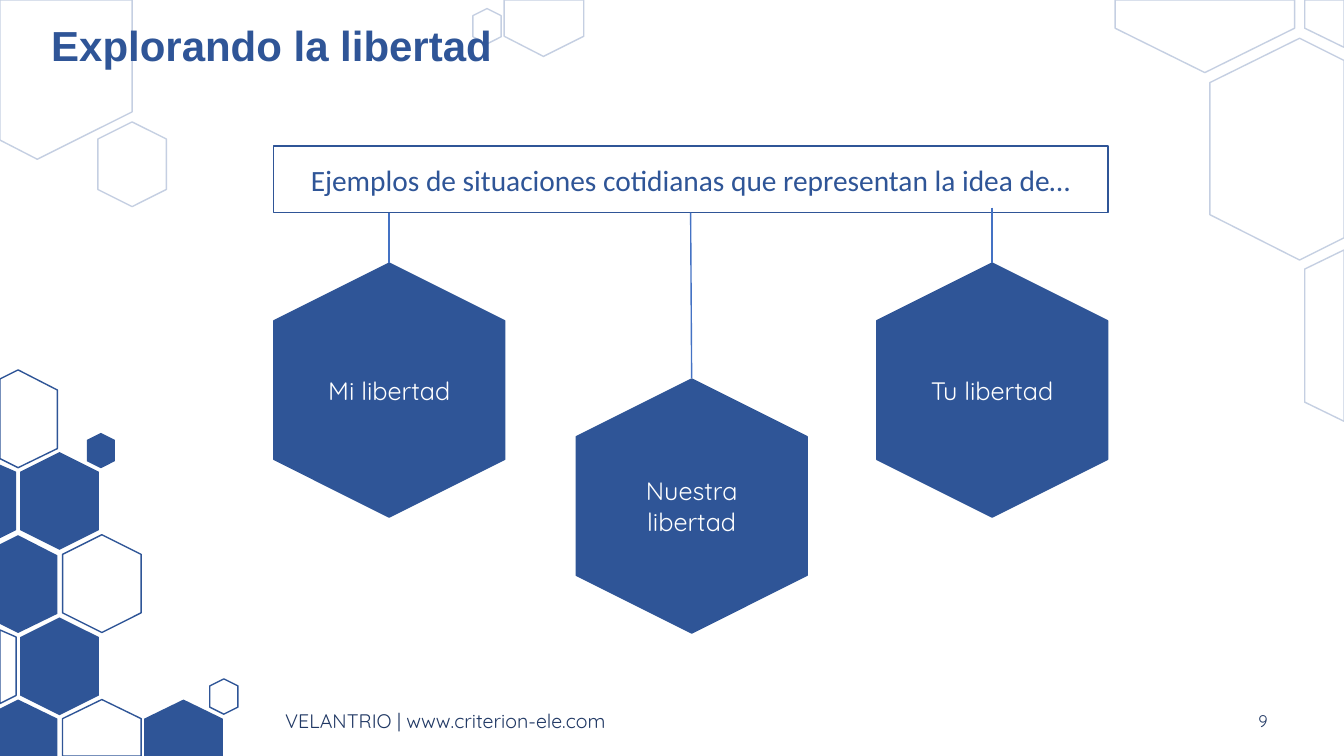
from lxml.etree import SubElement
from pptx import Presentation
from pptx.dml.color import RGBColor
from pptx.enum.shapes import MSO_CONNECTOR, MSO_SHAPE
from pptx.enum.text import MSO_ANCHOR, PP_ALIGN
from pptx.oxml.ns import qn
from pptx.util import Inches, Pt

BLUE = "2F5597"
NAVY = "203864"
WHITE = "FFFFFF"
LINK = "4472C4"

FAINT = [
    [(5, 0), (5.79, 0), (5.79, 0.36), (5.39, 0.56), (5, 0.36)],
    [(11.06, 0), (12.84, 0), (12.84, 0.28), (11.95, 0.72), (11.06, 0.28)],
    [(12.94, 0), (13.33, 0), (13.33, 0.47), (12.94, 0.28)],
    [(12.89, 0.38), (13.33, 0.6), (13.33, 2.36), (12.89, 2.58),
     (12, 2.13), (12, 0.82)],
    [(0, 0), (1.31, 0), (1.31, 1.11), (0.37, 1.58), (0, 1.39)],
    [(13.33, 2.48), (13.33, 4.18), (12.94, 3.99), (12.94, 2.67)],
]
HALF = [(0.18, 3.67), (0.57, 3.87), (0.57, 4.45), (0.18, 4.64),
        (0, 4.55), (0, 3.76)]
EDGE = [(0, 4.61), (0.16, 4.68), (0.16, 5.26), (0, 5.34)]
BASE = [(1.01, 6.94), (1.4, 7.13), (1.4, 7.5), (0.62, 7.5), (0.62, 7.13)]
CORNER = [(0.18, 6.94), (0.57, 7.13), (0.57, 7.5), (0, 7.5), (0, 7.03)]
ROW = 1.64
STEP = 0.81


def color(text):
    return RGBColor.from_string(text)


def paint(shape, fill, line=None, alpha=None):
    shape.shadow.inherit = False
    shape.fill.solid()
    shape.fill.fore_color.rgb = color(fill)
    if line is None:
        shape.line.fill.background()
        return
    shape.line.color.rgb = color(line)
    shape.line.width = Pt(1)
    if alpha:
        tint = shape.line._get_or_add_ln().find(".//" + qn("a:srgbClr"))
        SubElement(tint, qn("a:alpha")).set("val", str(alpha * 1000))


def write(shape, text, size, font, tone, align=PP_ALIGN.LEFT):
    frame = shape.text_frame
    frame.word_wrap = True
    frame.vertical_anchor = MSO_ANCHOR.MIDDLE
    para = frame.paragraphs[0]
    para.text = text
    para.alignment = align
    para.font.size = Pt(size)
    para.font.name = font
    para.font.color.rgb = color(tone)
    return para


def label(slide, x, y, w, h, *style):
    box = slide.shapes.add_textbox(Inches(x), Inches(y), Inches(w), Inches(h))
    return write(box, *style)


def hexagon(slide, x, y, long, wide, *style):
    shape = slide.shapes.add_shape(
        MSO_SHAPE.HEXAGON, Inches(x - long / 2), Inches(y - wide / 2),
        Inches(long), Inches(wide))
    shape.rotation = 90
    paint(shape, *style)
    return shape


def outline(slide, points, *style):
    spots = [(Inches(x), Inches(y)) for x, y in points]
    form = slide.shapes.build_freeform(*spots[0])
    form.add_line_segments(spots[1:], close=True)
    paint(form.convert_to_shape(), *style)


def shift(points, x=0, y=0):
    return [(a + x, b + y) for a, b in points]


def link(slide, x, y, to_x, to_y):
    line = slide.shapes.add_connector(
        MSO_CONNECTOR.STRAIGHT, Inches(x), Inches(y), Inches(to_x), Inches(to_y))
    line.line.color.rgb = color(LINK)
    line.line.width = Pt(1)
    SubElement(line._element.spPr, qn("a:effectLst"))
    return line


def decorate(slide):
    hexagon(slide, 4.83, 0.26, 0.35, 0.28, WHITE, BLUE, 28)
    for points in FAINT:
        outline(slide, points, WHITE, BLUE, 28)
    hexagon(slide, 1.31, 1.63, 0.84, 0.68, WHITE, BLUE, 28)

    outline(slide, HALF, WHITE, BLUE)
    outline(slide, EDGE, BLUE)
    outline(slide, shift(HALF, y=ROW), BLUE)
    outline(slide, shift(EDGE, y=ROW), WHITE, BLUE)
    outline(slide, CORNER, BLUE)
    outline(slide, BASE, WHITE, BLUE)
    outline(slide, shift(BASE, x=STEP), BLUE)
    for y in (4.97, 4.97 + ROW):
        hexagon(slide, 0.59, y, 0.97, 0.78, BLUE)
    hexagon(slide, 1.01, 5.79, 0.97, 0.78, WHITE, BLUE)
    hexagon(slide, 2.22, 6.91, 0.35, 0.28, WHITE, BLUE)
    hexagon(slide, 1, 4.47, 0.35, 0.28, BLUE)


def idea(slide, text, x, y):
    shape = hexagon(slide, x, y, 2.52, 2.29, BLUE, BLUE)
    write(shape, text, 18, "Quicksand", WHITE, PP_ALIGN.CENTER)
    shape.text_frame._txBody.bodyPr.set("vert", "vert270")


def main():
    deck = Presentation()
    deck.slide_width = Inches(13.33)
    deck.slide_height = Inches(7.5)
    slide = deck.slides.add_slide(deck.slide_layouts[6])
    decorate(slide)

    label(slide, 2.73, 6.95, 6.53, 0.4, "VELANTRIO | www.criterion-ele.com",
          14, "Quicksand", NAVY)
    label(slide, 11.68, 6.95, 0.99, 0.4, "9", 12, "Quicksand", NAVY,
          PP_ALIGN.RIGHT)
    title = label(slide, 0.41, 0.18, 11.56, 0.6, "Explorando la libertad",
                  30, "Arial", BLUE)
    title.font.bold = True
    title.line_spacing = 0.9

    banner = slide.shapes.add_shape(
        MSO_SHAPE.RECTANGLE, Inches(2.71), Inches(1.45), Inches(8.28), Inches(0.66))
    paint(banner, WHITE, BLUE)
    write(banner, "Ejemplos de situaciones cotidianas que representan la idea de…",
          21, "Calibri", BLUE, PP_ALIGN.CENTER)

    idea(slide, "Mi libertad", 3.86, 3.87)
    idea(slide, "Tu libertad", 9.84, 3.87)
    link(slide, 3.86, 2.11, 3.86, 2.61)
    link(slide, 9.84, 2.06, 9.84, 2.61)
    idea(slide, "Nuestra libertad", 6.86, 5.02)
    link(slide, 6.85, 2.11, 6.86, 3.75).begin_connect(banner, 2)

    deck.save("out.pptx")


if __name__ == "__main__":
    main()
